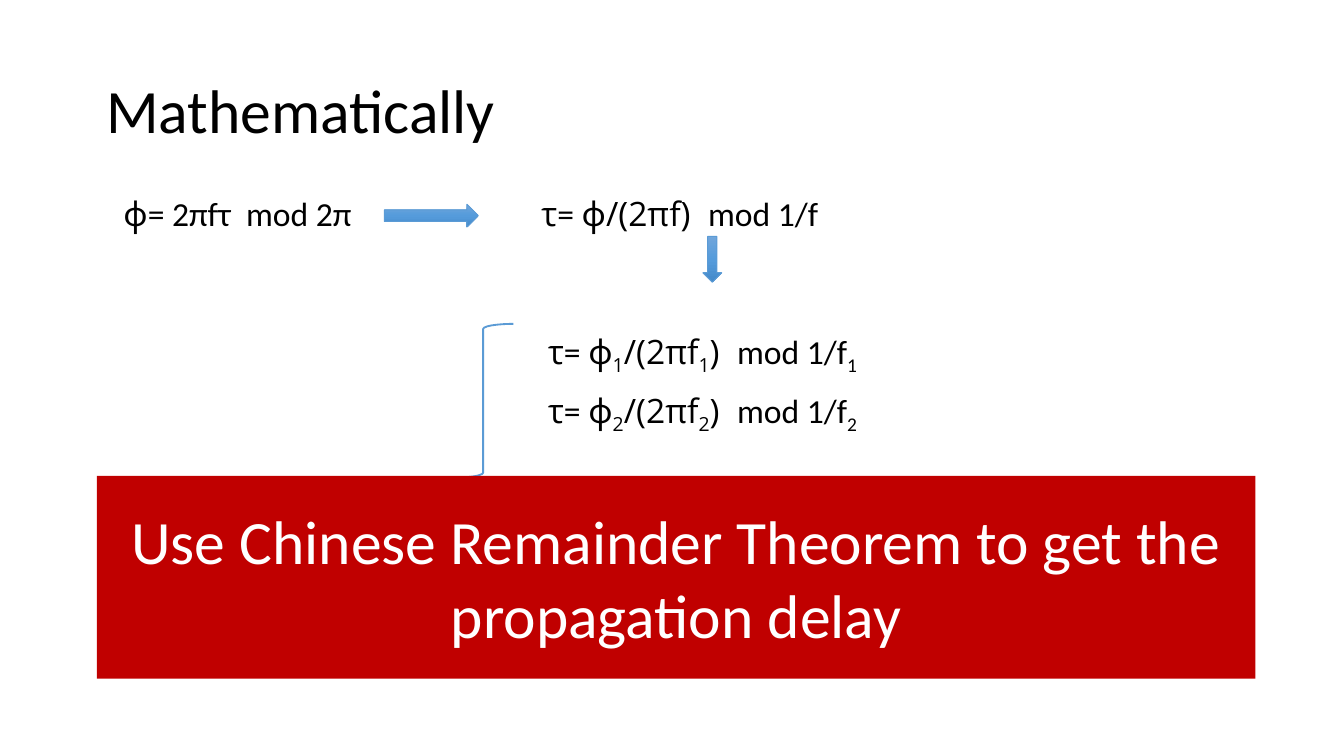
from copy import deepcopy

from pptx import Presentation
from pptx.dml.color import RGBColor
from pptx.enum.shapes import MSO_SHAPE
from pptx.enum.text import MSO_ANCHOR, MSO_AUTO_SIZE, PP_ALIGN
from pptx.util import Inches, Pt

RIGHT_ARROW, DOWN_ARROW = MSO_SHAPE.RIGHT_ARROW, MSO_SHAPE.DOWN_ARROW
LEFT_BRACE, RECTANGLE = MSO_SHAPE.LEFT_BRACE, MSO_SHAPE.RECTANGLE
LEFT, CENTER, MIDDLE = PP_ALIGN.LEFT, PP_ALIGN.CENTER, MSO_ANCHOR.MIDDLE
NO_FIT, GROW = MSO_AUTO_SIZE.NONE, MSO_AUTO_SIZE.SHAPE_TO_FIT_TEXT

PAGE_WIDTH = 10
PAGE_HEIGHT = PAGE_WIDTH * 9 / 16
LATIN, GREEK = "Calibri", "Open Sans"
BLACK, WHITE, RED, BLUE = "000000", "FFFFFF", "C00000", "5B9BD5"
ARROW_SHADES = [(0, "71A6DB"), (0.5, "559BDB"), (1, "448ACA")]

TITLE = "Mathematically"
BANNER = "Use Chinese Remainder Theorem to get the propagation delay"


def delay_equation(index):
    """Spans (text, font, is_subscript) of the delay for one frequency."""
    return [("τ", GREEK, False), ("= ", LATIN, False),
            ("ϕ", GREEK, False), (index, GREEK, True),
            ("/(2πf", GREEK, False), (index, GREEK, True),
            (")  ", GREEK, False),
            ("mod 1/f", LATIN, False), (index, LATIN, True)]


EQUATIONS = [
    ((0.82, 1.39, 1.93, 0.4), [("ϕ", GREEK, False), ("= 2πfτ  mod 2π", LATIN, False)]),
    ((3.93, 1.39, 2.49, 0.4), [("τ", GREEK, False), ("= ", LATIN, False),
                               ("ϕ/(2πf)  ", GREEK, False), ("mod 1/f", LATIN, False)]),
    ((3.98, 2.41, 2.7, 0.4), delay_equation("1")),
    ((3.98, 2.85, 2.7, 0.4), delay_equation("2")),
]
ARROWS = [
    (RIGHT_ARROW, (2.86, 1.52, 0.7, 0.17)),
    (DOWN_ARROW, (5.23, 1.76, 0.14, 0.34)),
]


def color(value):
    return RGBColor.from_string(value)


def inches(area):
    return [Inches(length) for length in area]


def add_span(para, text, font, size, shade, subscript=False):
    span = para.add_run()
    span.text = text
    span.font.name, span.font.size = font, Pt(size)
    span.font.color.rgb = color(shade)
    if subscript:
        span._r.get_or_add_rPr().set("baseline", "-25000")


def add_shape(page, kind, area, line_width=0):
    shape = page.shapes.add_shape(kind, *inches(area))
    shape.shadow.inherit = False
    if line_width:
        shape.line.color.rgb = color(BLUE)
        shape.line.width = Pt(line_width)
    else:
        shape.line.fill.background()
    return shape


def shade_arrow(fill):
    fill.gradient()
    fill.gradient_angle = 270
    first = fill.gradient_stops[0]._gs
    first.addnext(deepcopy(first))
    for stop, (position, shade) in zip(fill.gradient_stops, ARROW_SHADES):
        stop.position = position
        stop.color.rgb = color(shade)


deck = Presentation()
deck.slide_width, deck.slide_height = inches((PAGE_WIDTH, PAGE_HEIGHT))
page = deck.slides.add_slide(deck.slide_layouts[5])

title = page.shapes.title
title.left, title.top, title.width, title.height = inches((0.69, 0.3, 8.62, 1.09))
title.text_frame.auto_size = NO_FIT
title.text_frame.vertical_anchor = MIDDLE
para = title.text_frame.paragraphs[0]
para.alignment, para.line_spacing = LEFT, 0.9
add_span(para, TITLE, LATIN, 33, BLACK)

for area, spans in EQUATIONS:
    frame = page.shapes.add_textbox(*inches(area)).text_frame
    frame.word_wrap, frame.auto_size = False, GROW
    for text, font, subscript in spans:
        add_span(frame.paragraphs[0], text, font, 18, BLACK, subscript)

for kind, area in ARROWS:
    shade_arrow(add_shape(page, kind, area, 0.5).fill)

brace = add_shape(page, LEFT_BRACE, (3.37, 2.41, 0.45, 2.29), 1)
brace.fill.background()

banner = add_shape(page, RECTANGLE, (0.72, 3.54, 8.62, 1.51))
banner.fill.solid()
banner.fill.fore_color.rgb = color(RED)
banner.text_frame.word_wrap = True
banner.text_frame.vertical_anchor = MIDDLE
para = banner.text_frame.paragraphs[0]
para.alignment = CENTER
add_span(para, BANNER, LATIN, 33, WHITE)

deck.save("out.pptx")
